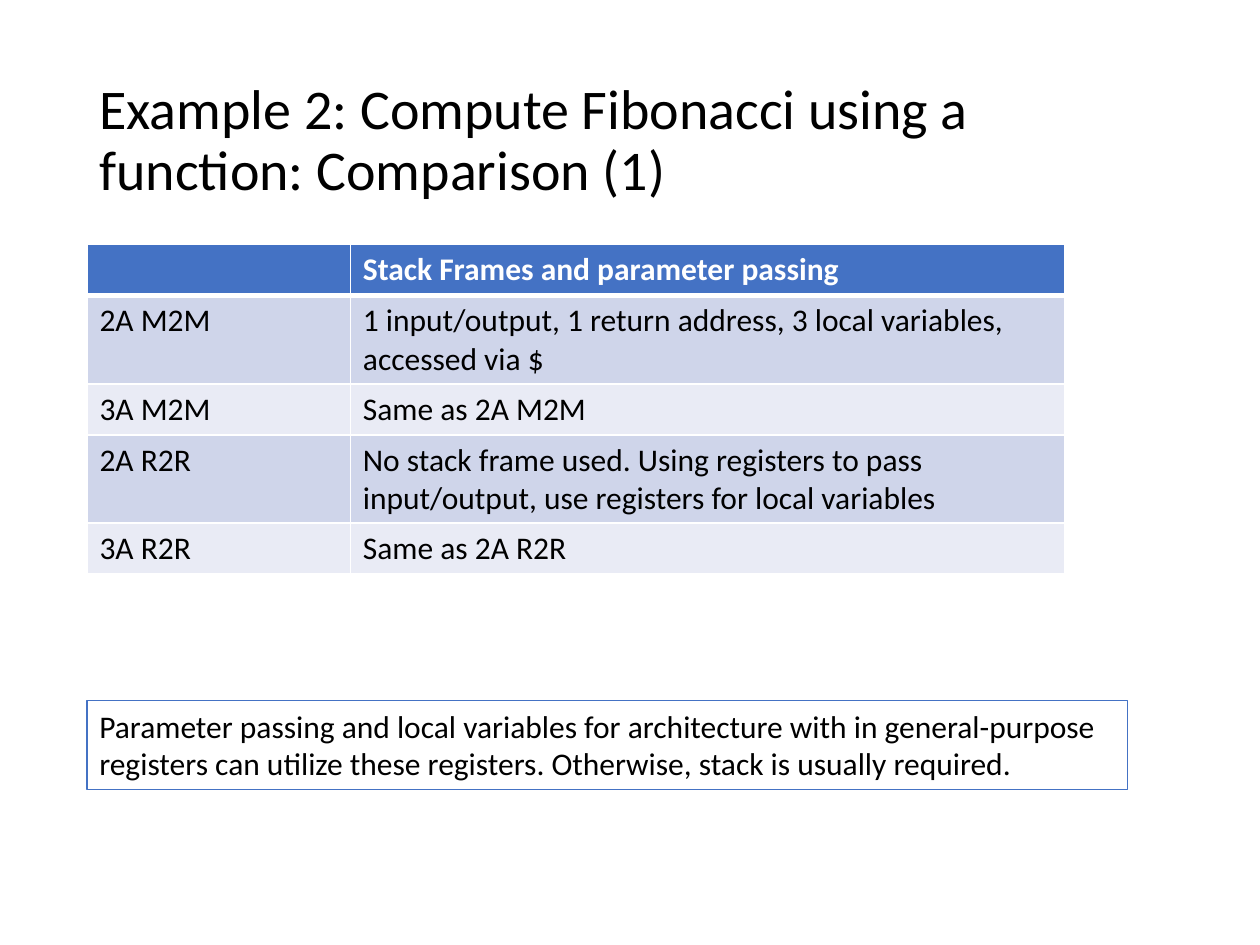
from lxml.etree import SubElement as Sub
from pptx import Presentation as Deck
from pptx.dml.color import RGBColor as Color
from pptx.enum.shapes import MSO_SHAPE as Kind
from pptx.enum.text import MSO_ANCHOR as Anchor, MSO_AUTO_SIZE as Fit, PP_ALIGN as Align
from pptx.oxml.ns import qn
from pptx.util import Pt

BLACK = Color(0x00, 0x00, 0x00)
WHITE = Color(0xFF, 0xFF, 0xFF)
BLUE = Color(0x44, 0x72, 0xC4)
BANDS = [Color(0xCF, 0xD5, 0xEA), Color(0xE9, 0xEB, 0xF5)]

LEFT = 49.7
BODY = {"name": "Calibri", "size": Pt(18), "bold": False}
HEAD = {**BODY, "bold": True}
TITLE = {**BODY, "size": Pt(32)}

COLS = [150.5, 408.2]
LOW, TALL = 29.2, 50.4  # rows of one and two text lines
ROWS = [
    (LOW, "", "Stack Frames and parameter passing"),
    (TALL, "2A M2M", "1 input/output, 1 return address, 3 local variables, accessed via $"),
    (LOW, "3A M2M", "Same as 2A M2M"),
    (TALL, "2A R2R", "No stack frame used. Using registers to pass input/output, "
                     "use registers for local variables"),
    (LOW, "3A R2R", "Same as 2A R2R"),
]
NOTE = [
    "Parameter passing and local variables for architecture with in general-purpose",
    "registers can utilize these registers. Otherwise, stack is usually required.",
]


def write(frame, lines, form, color, **para):
    """Fill a text frame with one paragraph per line."""
    for i, line in enumerate(lines):
        p = frame.add_paragraph() if i else frame.paragraphs[0]
        for key, val in {"alignment": Align.LEFT, **para}.items():
            setattr(p, key, val)
        # An empty line keeps its format on the paragraph
        font = p.font
        if line:
            run = p.add_run()
            run.text = line
            font = run.font
        for key, val in form.items():
            setattr(font, key, val)
        font.color.rgb = color


def edge(cell, side, width):
    """Draw one white cell border."""
    line = Sub(cell._tc.get_or_add_tcPr(), qn("a:ln" + side), w=str(Pt(width)))
    fill = Sub(line, qn("a:solidFill"))
    Sub(fill, qn("a:srgbClr"), val=str(WHITE))


def add_title(slide, text):
    box = slide.shapes.add_textbox(Pt(LEFT), Pt(28.8), Pt(620.6), Pt(104.4))
    frame = box.text_frame
    frame.word_wrap = True
    frame.vertical_anchor = Anchor.MIDDLE
    write(frame, [text], TITLE, BLACK, line_spacing=0.9)


def add_grid(slide):
    high = sum(row[0] for row in ROWS)
    table = slide.shapes.add_table(len(ROWS), len(COLS), Pt(LEFT), Pt(139.7),
                                   Pt(sum(COLS)), Pt(high)).table
    for col, width in zip(table.columns, COLS):
        col.width = Pt(width)
    for r, (tall, *texts) in enumerate(ROWS):
        table.rows[r].height = Pt(tall)
        for c, text in enumerate(texts):
            cell = table.cell(r, c)
            # A thick rule parts the header from the body
            sides = {"L": 1, "R": 1, "T": 3 if r == 1 else 1, "B": 1 if r else 3}
            for side, width in sides.items():
                edge(cell, side, width)
            cell.fill.solid()
            cell.fill.fore_color.rgb = BANDS[(r - 1) % 2] if r else BLUE
            form, color = (BODY, BLACK) if r else (HEAD, WHITE)
            write(cell.text_frame, [text], form, color)


def add_note(slide):
    box = slide.shapes.add_shape(Kind.RECTANGLE, Pt(LEFT), Pt(400.3), Pt(594.7), Pt(50.9))
    box.shadow.inherit = False
    box.fill.background()
    box.line.color.rgb = BLUE
    box.line.width = Pt(0.75)
    frame = box.text_frame
    frame.word_wrap = False
    frame.auto_size = Fit.SHAPE_TO_FIT_TEXT
    frame.vertical_anchor = Anchor.TOP
    write(frame, NOTE, BODY, BLACK)


def main():
    deck = Deck()
    deck.slide_width, deck.slide_height = Pt(720), Pt(540)
    slide = deck.slides.add_slide(deck.slide_layouts[6])
    # Title, comparison table, conclusion
    add_title(slide, "Example 2: Compute Fibonacci using a function: Comparison (1)")
    add_grid(slide)
    add_note(slide)
    deck.save("out.pptx")


if __name__ == "__main__":
    main()
